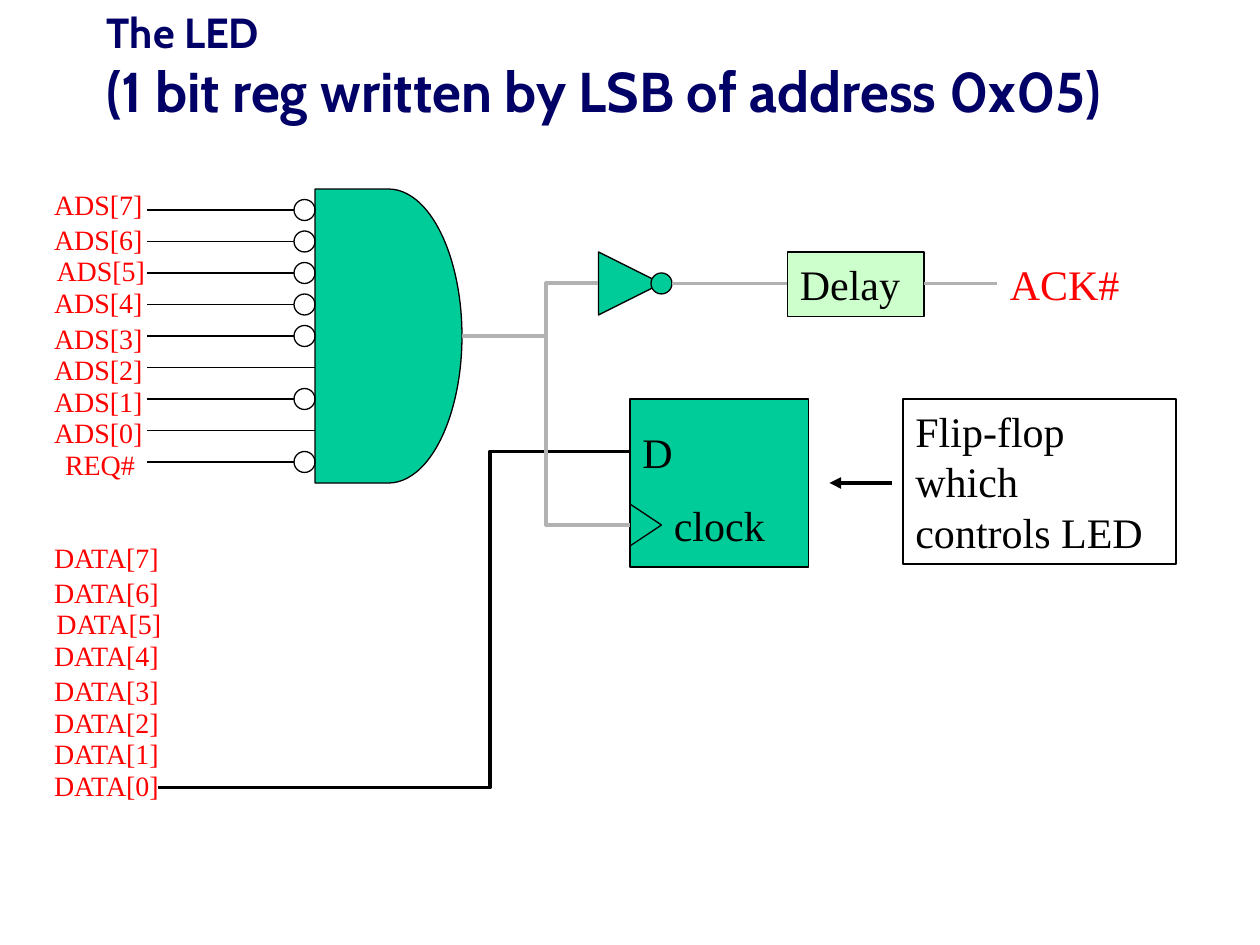
from dataclasses import dataclass
from lxml.etree import SubElement
from pptx import Presentation
from pptx.dml.color import RGBColor
from pptx.enum.shapes import MSO_CONNECTOR as Connector, MSO_SHAPE as Shape
from pptx.enum.text import MSO_ANCHOR as Anchor, MSO_AUTO_SIZE as AutoSize, PP_ALIGN as Align
from pptx.oxml.ns import qn
from pptx.util import Pt


@dataclass(frozen=True)
class Theme:
    title_font: str = "Cabin"
    body_font: str = "Times New Roman"
    title: str = "000066"
    ink: str = "000000"
    signal: str = "FF0000"
    wire: str = "B2B2B2"
    gate: str = "00CC99"
    delay: str = "CCFFCC"
    title_size: int = 32
    body_size: int = 24
    label_size: int = 16
    thin: float = 0.75
    thick: float = 2.25


class CircuitSlide:
    def __init__(self, presentation, theme):
        self.theme = theme
        self.slide = presentation.slides.add_slide(presentation.slide_layouts[6])
        self.shapes = self.slide.shapes

    def run(self, paragraph, text, size, color, font=None, bold=False):
        run = paragraph.add_run()
        run.text = text
        run.font.name = font or self.theme.body_font
        run.font.size = Pt(size)
        run.font.bold = bold
        run.font.color.rgb = RGBColor.from_string(color)

    def outline(self, shape, color, width):
        shape.line.color.rgb = RGBColor.from_string(color)
        shape.line.width = Pt(width)

    def title(self, left, top, width, height, first, second):
        theme = self.theme
        frame = self.shapes.add_textbox(Pt(left), Pt(top), Pt(width), Pt(height)).text_frame
        frame.word_wrap = True
        paragraph = frame.paragraphs[0]
        self.run(paragraph, first, theme.body_size, theme.title, theme.title_font, True)
        paragraph.add_line_break()
        self.run(paragraph, second, theme.title_size, theme.title, theme.title_font, True)

    def text(self, left, top, width, height, text, size, color, wrap=False, align=Align.LEFT):
        frame = self.shapes.add_textbox(Pt(left), Pt(top), Pt(width), Pt(height)).text_frame
        frame.word_wrap = wrap
        frame.auto_size = AutoSize.SHAPE_TO_FIT_TEXT
        frame.paragraphs[0].alignment = align
        self.run(frame.paragraphs[0], text, size, color)

    def block(self, kind, left, top, width, height, fill=None, text=None, rotation=0):
        shape = self.shapes.add_shape(kind, Pt(left), Pt(top), Pt(width), Pt(height))
        shape.shadow.inherit = False
        shape.rotation = rotation
        if fill:
            shape.fill.solid()
            shape.fill.fore_color.rgb = RGBColor.from_string(fill)
        else:
            shape.fill.background()
        self.outline(shape, self.theme.ink, self.theme.thin)
        if text:
            frame = shape.text_frame
            frame.word_wrap = True
            frame.vertical_anchor = Anchor.TOP
            frame.paragraphs[0].alignment = Align.LEFT
            self.run(frame.paragraphs[0], text, self.theme.body_size, self.theme.ink)

    def line(self, start, end, color, width, arrow=False):
        line = self.shapes.add_connector(Connector.STRAIGHT, *map(Pt, start + end))
        self.outline(line, color, width)
        properties = line._element.spPr
        if arrow:
            SubElement(properties.find(qn("a:ln")), qn("a:tailEnd"), type="triangle")
        SubElement(properties, qn("a:effectLst"))

    def bent_wire(self, points, color):
        start, *rest = [(Pt(x), Pt(y)) for x, y in points]
        builder = self.shapes.build_freeform(*start)
        builder.add_line_segments(rest, close=False)
        shape = builder.convert_to_shape()
        shape.shadow.inherit = False
        shape.fill.background()
        self.outline(shape, color, self.theme.thick)


PITCH = 18  # distance between neighbouring signals
BUBBLE = 12
NUDGES = (-4.3, -2.5, -2.5, -2.5, 0, 0, 0, 0)  # label shifts, bit 7 first
ADDRESS = "00000101"  # decoded address, bit 7 first


def bus_labels(circuit, name, top, width):
    theme = circuit.theme
    for row, nudge in enumerate(NUDGES):
        bit = 7 - row
        left = 25.2 if bit == 5 else 23.8
        circuit.text(left, top + PITCH * row + nudge, width, 26.6,
                     f"{name}[{bit}]", theme.label_size, theme.signal)


def main():
    presentation = Presentation()
    presentation.slide_width, presentation.slide_height = Pt(720), Pt(540)
    theme = Theme()
    circuit = CircuitSlide(presentation, theme)
    circuit.title(54, 0, 612, 90, "The LED", "(1 bit reg written by LSB of address 0x05)")

    # Address decoder: low address bits and REQ# are inverted
    circuit.block(Shape.FLOWCHART_DELAY, 180, 108, 84, 168, theme.gate)
    for row, level in enumerate(ADDRESS + "0"):
        y = 120 + PITCH * row
        end = 180
        if level == "0":
            end -= BUBBLE
            circuit.block(Shape.OVAL, end, y - BUBBLE / 2, BUBBLE, BUBBLE)
        circuit.line((84, y), (end, y), theme.ink, theme.thin)
    bus_labels(circuit, "ADS", 108, 65.5)
    circuit.text(29.5, 252, 54.7, 26.6, "REQ#", theme.label_size, theme.signal,
                 align=Align.RIGHT)

    # Flip-flop
    circuit.block(Shape.RECTANGLE, 516, 228, 156, 94.3, text="Flip-flop which controls LED")
    circuit.block(Shape.RECTANGLE, 360, 228, 102, 96, theme.gate)
    for y in (288, 312):
        circuit.line((360, y), (378, 300), theme.ink, theme.thin)
    circuit.text(378, 282, 102, 36, "clock", theme.body_size, theme.ink, wrap=True)
    circuit.text(360, 240, 42, 36, "D", theme.body_size, theme.ink, wrap=True)
    circuit.line((510, 276), (474, 276), theme.ink, theme.thick, arrow=True)

    # Data bus and wires into the flip-flop
    bus_labels(circuit, "DATA", 309.6, 74.9)
    circuit.bent_wire([(90, 450), (280, 450), (280, 258), (360, 258)], theme.ink)
    circuit.bent_wire([(264, 192), (312, 192), (312, 300), (360, 300)], theme.wire)

    # Inverter, delay and acknowledge
    circuit.block(Shape.ISOSCELES_TRIANGLE, 342, 144, 36, 36, theme.gate, rotation=90)
    circuit.bent_wire([(312, 192), (312, 162), (342, 162)], theme.wire)
    circuit.block(Shape.OVAL, 372, 156, BUBBLE, BUBBLE, theme.gate)
    circuit.line((384, 162), (450, 162), theme.wire, theme.thick)
    circuit.block(Shape.RECTANGLE, 450, 144, 78, 36.7, theme.delay, "Delay")
    circuit.line((528, 162), (570, 162), theme.wire, theme.thick)
    circuit.text(570, 144, 77, 36, "ACK#", theme.body_size, theme.signal)

    presentation.save("out.pptx")


if __name__ == "__main__":
    main()
